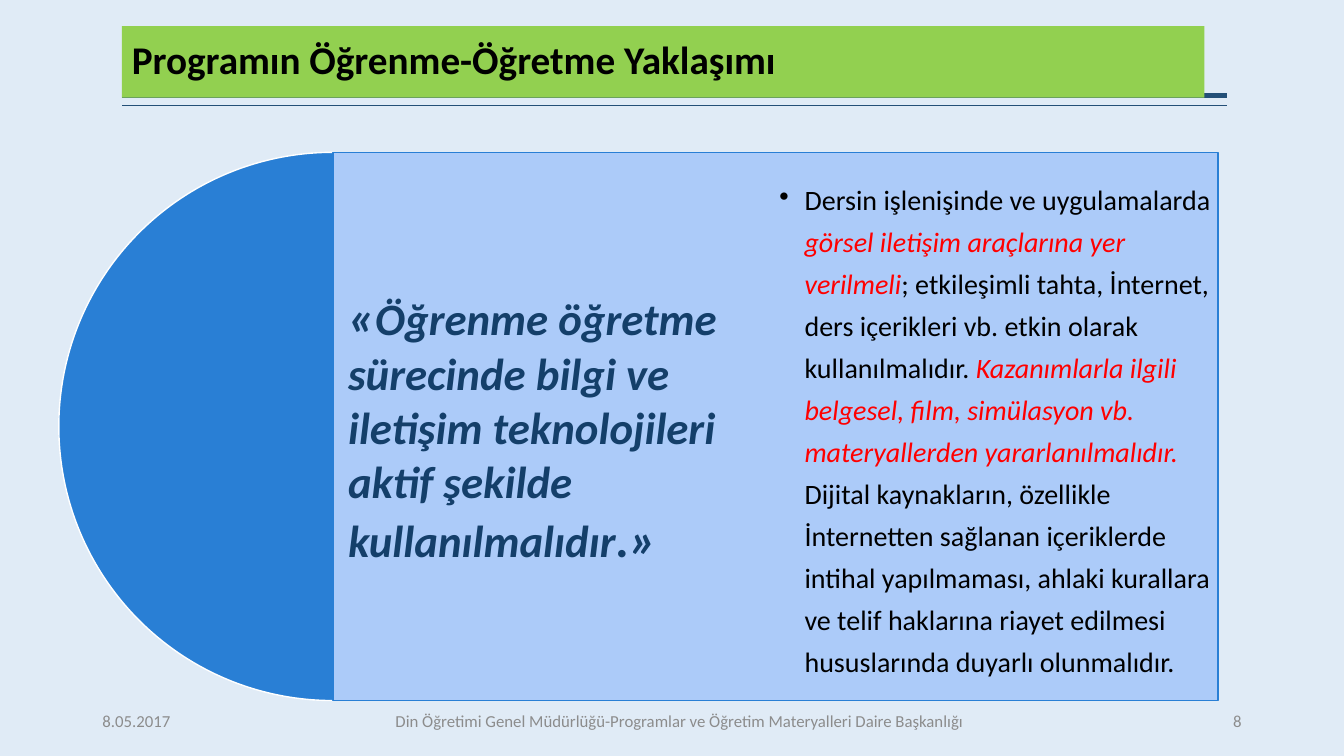
from dataclasses import dataclass

from lxml import etree
from pptx import Presentation
from pptx.dml.color import RGBColor
from pptx.enum.shapes import MSO_CONNECTOR, MSO_SHAPE
from pptx.enum.text import MSO_ANCHOR, MSO_AUTO_SIZE, PP_ALIGN
from pptx.oxml.ns import qn
from pptx.util import Pt

STRAIGHT = MSO_CONNECTOR.STRAIGHT
PIE, RECTANGLE = MSO_SHAPE.PIE, MSO_SHAPE.RECTANGLE
MIDDLE, NO_AUTOFIT = MSO_ANCHOR.MIDDLE, MSO_AUTO_SIZE.NONE
LEFT, CENTER, RIGHT = PP_ALIGN.LEFT, PP_ALIGN.CENTER, PP_ALIGN.RIGHT


@dataclass(frozen=True)
class Theme:
    """Colours, font and type sizes of the slide."""
    font: str = "Calibri"
    background: str = "E0EBF6"
    banner: str = "92D050"
    rule: str = "234F77"
    accent: str = "297FD5"
    panel: str = "ACCBF9"
    white: str = "FFFFFF"
    text: str = "000000"
    quote: str = "143F6A"
    emphasis: str = "FF0000"
    muted: str = "8C8C8C"
    title_size: int = 28
    mark_size: int = 36
    quote_size: int = 32
    body_size: int = 20
    footer_size: int = 12


THEME = Theme()


def apply(target, formats):
    """Set every attribute in formats on the target."""
    for name, value in formats.items():
        setattr(target, name, value)


def color(code):
    """Turn a hex code into a colour."""
    return RGBColor.from_string(code)


def paint(shape, fill, line):
    """Give a shape a flat fill and a thin outline."""
    shape.shadow.inherit = False
    shape.fill.solid()
    shape.fill.fore_color.rgb = color(fill)
    shape.line.color.rgb = color(line)
    shape.line.width = Pt(1)


def prepare_frame(frame, inset_x, inset_y):
    """Set wrapping, anchor and insets of a text frame."""
    apply(frame, {
        "word_wrap": True, "auto_size": NO_AUTOFIT, "vertical_anchor": MIDDLE,
        "margin_left": Pt(inset_x), "margin_right": Pt(inset_x),
        "margin_top": Pt(inset_y), "margin_bottom": Pt(inset_y)})


def write(paragraph, text, size, shade, bold=False, italic=False):
    """Add a formatted run to a paragraph."""
    run = paragraph.add_run()
    run.text = text
    apply(run.font, {"name": THEME.font, "size": Pt(size), "bold": bold, "italic": italic})
    run.font.color.rgb = color(shade)


def add_text_area(slide, box, inset_x, inset_y):
    """Add a text box and return its first paragraph."""
    frame = slide.shapes.add_textbox(*map(Pt, box)).text_frame
    prepare_frame(frame, inset_x, inset_y)
    return frame.paragraphs[0]


def add_header(slide, box):
    """Place the title banner over its two rules."""
    left, top, width, height = box
    for offset, weight in ((-1.5, 3), (5.7, 1)):
        y = top + height + offset
        rule = slide.shapes.add_connector(
            STRAIGHT, Pt(left + width + 16), Pt(y), Pt(left), Pt(y))
        rule.line.color.rgb = color(THEME.rule)
        rule.line.width = Pt(weight)
        etree.SubElement(rule._element.spPr, qn("a:effectLst"))

    title = slide.shapes.title
    apply(title, dict(zip(("left", "top", "width", "height"), map(Pt, box))))
    title.fill.solid()
    title.fill.fore_color.rgb = color(THEME.banner)
    prepare_frame(title.text_frame, 7.2, 3.6)
    heading = title.text_frame.paragraphs[0]
    apply(heading, {"alignment": LEFT, "line_spacing": 0.9})
    write(heading, "Programın Öğrenme-Öğretme Yaklaşımı",
          THEME.title_size, THEME.text, bold=True)
    slide.shapes._spTree.append(title._element)


def add_approach(slide, box):
    """Place the half disc, the panel, the quotation and its explanation."""
    left, top, width, height = box
    radius = height / 2
    panel_left, panel_width = left + radius, width - radius

    half_disc = slide.shapes.add_shape(PIE, *map(Pt, (left, top, height, height)))
    half_disc.adjustments[0] = 54
    half_disc.adjustments[1] = 162
    paint(half_disc, THEME.accent, THEME.white)
    panel = slide.shapes.add_shape(
        RECTANGLE, *map(Pt, (panel_left, top, panel_width, height)))
    paint(panel, THEME.panel, THEME.accent)

    quotation = add_text_area(
        slide, (panel_left, top, panel_width / 2, height), 10.8, 10.8)
    quotation.space_after = Pt(12)
    for text, size in (
            ("«", THEME.mark_size),
            ("Öğrenme öğretme sürecinde bilgi ve iletişim teknolojileri aktif şekilde "
             "kullanılmalıdır", THEME.quote_size),
            (".»", THEME.mark_size)):
        write(quotation, text, size, THEME.quote, bold=True, italic=True)

    explanation = add_text_area(
        slide, (panel_left + 299.5, top, 350, height), 19.4, 19.4)
    apply(explanation, {"level": 1, "line_spacing": 1.25, "space_after": Pt(3)})
    properties = explanation._p.get_or_add_pPr()
    properties.set("marL", str(Pt(18)))
    properties.set("indent", str(Pt(-18)))
    etree.SubElement(properties, qn("a:buChar")).set("char", "•")
    for text, emphasized in (
            ("Dersin işlenişinde ve uygulamalarda ", False),
            ("görsel iletişim araçlarına yer verilmeli", True),
            ("; etkileşimli tahta, İnternet, ders içerikleri vb. etkin olarak "
             "kullanılmalıdır. ", False),
            ("Kazanımlarla ilgili belgesel, film, simülasyon vb. materyallerden "
             "yararlanılmalıdır. ", True),
            ("Dijital kaynakların, özellikle İnternetten sağlanan içeriklerde intihal "
             "yapılmaması, ahlaki kurallara ve telif haklarına riayet edilmesi "
             "hususlarında duyarlı olunmalıdır.", False)):
        shade = THEME.emphasis if emphasized else THEME.text
        write(explanation, text, THEME.body_size, shade, italic=emphasized)


def add_footer(slide, box):
    """Place the date, the department and the page number."""
    left, top, width, height = box
    for text, offset, part_width, alignment in (
            ("8.05.2017", 0, 90, LEFT),
            ("Din Öğretimi Genel Müdürlüğü-Programlar ve Öğretim Materyalleri "
             "Daire Başkanlığı", 113.8, 611.3, CENTER),
            ("8", width - 83.5, 83.5, RIGHT)):
        entry = add_text_area(slide, (left + offset, top, part_width, height), 7.2, 3.6)
        entry.alignment = alignment
        write(entry, text, THEME.footer_size, THEME.muted)


def main():
    """Build and save the slide."""
    deck = Presentation()
    apply(deck, {"slide_width": Pt(960), "slide_height": Pt(540)})
    slide = deck.slides.add_slide(deck.slide_layouts[5])
    slide.background.fill.solid()
    slide.background.fill.fore_color.rgb = color(THEME.background)
    add_header(slide, (87, 18.7, 773.3, 51.1))
    add_approach(slide, (42, 108.8, 828, 391.6))
    add_footer(slide, (66, 500.5, 828, 28.8))
    deck.save("out.pptx")


if __name__ == "__main__":
    main()
